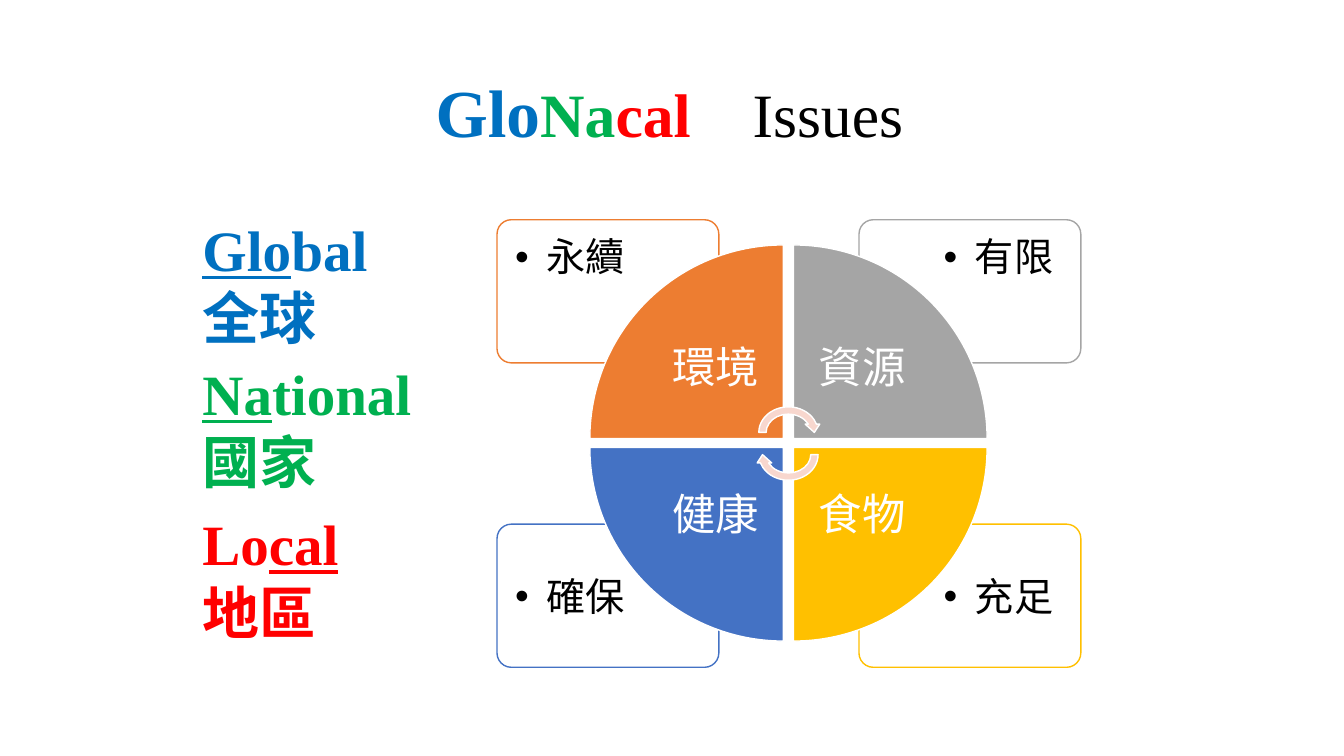
from lxml import etree
from pptx import Presentation
from pptx.dml.color import RGBColor
from pptx.enum.shapes import MSO_SHAPE
from pptx.enum.text import MSO_ANCHOR, PP_ALIGN
from pptx.oxml.ns import qn
from pptx.util import Emu, Pt

PX = 9144  # 100 px to the inch
CARD = MSO_SHAPE.ROUNDED_RECTANGLE
WEDGE = MSO_SHAPE.PIE_WEDGE
CYCLE_ARROW = MSO_SHAPE.CIRCULAR_ARROW
TOP, MIDDLE = MSO_ANCHOR.TOP, MSO_ANCHOR.MIDDLE
LEFT, CENTER = PP_ALIGN.LEFT, PP_ALIGN.CENTER

LATIN, CJK = "Times New Roman", "Noto Sans CJK SC"
COLORS = {
    "black": "000000", "white": "FFFFFF", "orange": "ED7D31", "gray": "A5A5A5",
    "gold": "FFC000", "blue": "4472C4", "pink": "F8D7CE",
    "global": "0070C0", "national": "00B050", "local": "FF0000",
}

# Left edges by column and top edges by row
CARD_X, CARD_Y = (493, 852), (218, 520)
NOTE_X, NOTE_Y = (496, 921), (221, 558)
WEDGE_X, WEDGE_Y = (585, 787), (243, 444)
NAME_X, NAME_Y = (642, 787), (299, 444)

# Quadrants clockwise: column, row, color, name, note
QUADRANTS = [
    (0, 0, "orange", "環境", "永續"),
    (1, 0, "gray", "資源", "有限"),
    (1, 1, "gold", "食物", "充足"),
    (0, 1, "blue", "健康", "確保"),
]

# Scale labels: top, size, color, (text, underlined) spans, translation
LABELS = [
    (218, 40.8, "global", [("Glo", True), ("bal", False)], "全球"),
    (361, 40.7, "national", [("Na", True), ("tional", False)], "國家"),
    (510, 40.7, "local", [("Lo", False), ("cal", True)], "地區"),
]


def px(value):
    return Emu(value * PX)


def rgb(name):
    return RGBColor.from_string(COLORS[name])


def add_span(para, text, size, color, font=LATIN, bold=False, underline=False):
    span = para.add_run()
    span.text = text
    span.font.name = font
    span.font.size = Pt(size)
    span.font.bold = bold
    span.font.underline = underline
    span.font.color.rgb = rgb(color)
    east_asian = etree.SubElement(span.font._element, qn("a:ea"))
    east_asian.set("typeface", CJK)
    return span


def add_shape(page, kind, left, top, width, height, fill, line, rotation=0):
    shape = page.shapes.add_shape(kind, px(left), px(top), px(width), px(height))
    shape.shadow.inherit = False
    shape.fill.solid()
    shape.fill.fore_color.rgb = rgb(fill)
    shape.line.color.rgb = rgb(line)
    shape.line.width = Pt(1)
    shape.rotation = rotation
    return shape


def add_box(page, left, top, width, height, anchor, inset=None):
    box = page.shapes.add_textbox(px(left), px(top), px(width), px(height))
    frame = box.text_frame
    frame.word_wrap = True
    frame.vertical_anchor = anchor
    if inset is not None:
        frame.margin_left = frame.margin_right = px(inset)
        frame.margin_top = frame.margin_bottom = px(inset)
    return frame


def add_bullet(para, indent):
    properties = para._p.get_or_add_pPr()
    properties.set("marL", str(px(indent)))
    properties.set("indent", str(px(-indent)))
    etree.SubElement(properties, qn("a:buFont")).set("typeface", "Arial")
    etree.SubElement(properties, qn("a:buChar")).set("char", "•")


def add_card(page, column, row, color, note):
    card = add_shape(page, CARD, CARD_X[column], CARD_Y[row], 220, 142, "white", color)
    card.adjustments[0] = 0.1
    fill_color = card.fill._xPr.find(qn("a:solidFill"))[0]
    etree.SubElement(fill_color, qn("a:alpha")).set("val", "90000")

    para = add_box(page, NOTE_X[column], NOTE_Y[row], 147, 100, TOP, 15).paragraphs[0]
    para.alignment = LEFT
    para.line_spacing = 0.9
    add_bullet(para, 31)
    add_span(para, note, 28, "black", CJK)


def add_wedge(page, column, row, color, name, rotation):
    add_shape(page, WEDGE, WEDGE_X[column], WEDGE_Y[row], 192, 192, color, "white", rotation)
    frame = add_box(page, NAME_X[column], NAME_Y[row], 136, 136, MIDDLE, 24)
    para = frame.paragraphs[0]
    para.alignment = CENTER
    para.line_spacing = 0.9
    add_span(para, name, 31, "white", CJK)


def add_label(page, top, size, color, spans, translation):
    frame = add_box(page, 191, top, 270, 125, MIDDLE)
    for text, underline in spans:
        add_span(frame.paragraphs[0], text, size, color, bold=True, underline=underline)
    add_span(frame.add_paragraph(), translation, size, color, bold=True)


def set_title(page):
    title = page.shapes.title
    title.left, title.top, title.width, title.height = px(210), px(68), px(908), px(94)
    frame = title.text_frame
    frame.word_wrap = True
    frame.vertical_anchor = MIDDLE
    para = frame.paragraphs[0]
    para.alignment = CENTER
    para.line_spacing = 0.9
    add_span(para, "Glo", 48, "global", bold=True)
    add_span(para, "Na", 44, "national", bold=True)
    add_span(para, "cal", 44, "local", bold=True)
    # One space, widened by letter spacing
    gap = add_span(para, " ", 44, "black")
    gap.font._element.set("spc", "3300")
    add_span(para, "Issues", 44, "black")


def main():
    deck = Presentation()
    deck.slide_width, deck.slide_height = px(1333), px(750)
    page = deck.slides.add_slide(deck.slide_layouts[5])
    set_title(page)

    # Cycle matrix: cards behind, wedges and arrows in front
    for column, row, color, _, note in QUADRANTS:
        add_card(page, column, row, color, note)
    for turn, (column, row, color, name, _) in enumerate(QUADRANTS):
        add_wedge(page, column, row, color, name, 90 * turn)
    for top, rotation in ((400, 0), (422, 180)):
        add_shape(page, CYCLE_ARROW, 749, top, 66, 58, "pink", "white", rotation)

    # Scale labels on the left
    for label in LABELS:
        add_label(page, *label)

    deck.save("out.pptx")


if __name__ == "__main__":
    main()
